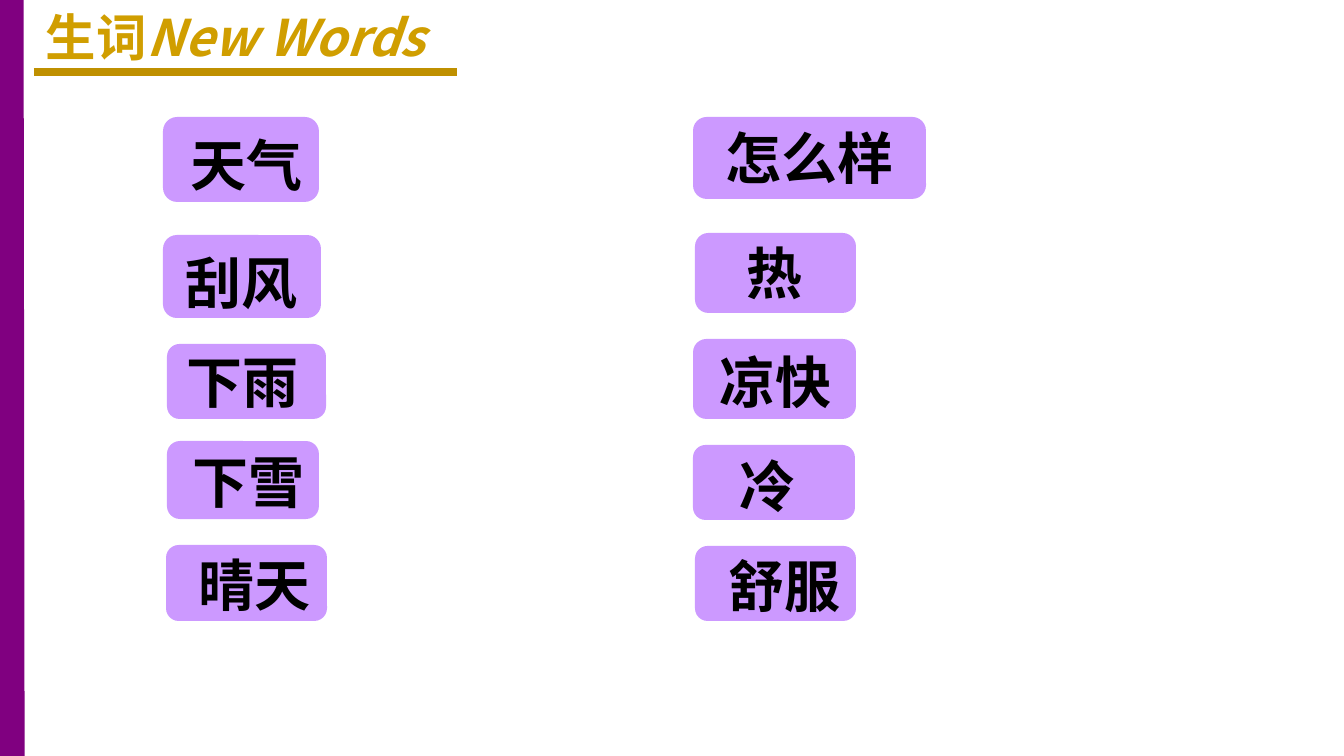
from lxml import etree
from pptx import Presentation
from pptx import util as u
from pptx.dml.color import RGBColor
from pptx.enum import shapes, text
from pptx.oxml.ns import qn

PX = 914400 / 100.8
CJK_FONT = "Noto Sans CJK SC"
TEXT_HEIGHT = 79

# word, card box (left, top, width, height), label offset in card (x, y), label width
WORD_CARDS = [
    ("天气", (163, 117, 156, 85), (15, 9), 137),
    ("刮风", (163, 235, 158, 83), (9, 9), 139),
    ("下雨", (167, 344, 159, 75), (9, -1), 133),
    ("下雪", (167, 441, 152, 78), (15, 2), 133),
    ("晴天", (166, 545, 161, 76), (22, 1), 133),
    ("怎么样", (693, 117, 233, 82), (11, 2), 211),
    ("热", (695, 233, 161, 80), (41, 1), 77),
    ("凉快", (693, 339, 163, 80), (16, 4), 133),
    ("冷", (693, 445, 162, 75), (36, 2), 77),
    ("舒服", (695, 546, 161, 75), (22, 1), 135),
]


def px(*lengths):
    return [u.Emu(round(length * PX)) for length in lengths]


def color(hex_string):
    return RGBColor.from_string(hex_string)


def add_line(parent, start, end, hex_color, points):
    line = parent.shapes.add_connector(
        shapes.MSO_CONNECTOR.STRAIGHT, *px(*start, *end))
    line.line.color.rgb = color(hex_color)
    line.line.width = u.Pt(points)
    etree.SubElement(line._element.spPr, qn("a:effectLst"))


def format_run(run, font_name, size, hex_color, italic=False):
    font = run.font
    font.name = font_name
    font.size = u.Pt(size)
    font.bold = True
    font.italic = italic
    font.color.rgb = color(hex_color)
    latin = run._r.rPr.find(qn("a:latin"))
    east_asian = etree.Element(qn("a:ea"), typeface=CJK_FONT)
    latin.addnext(east_asian)


def add_title(slide, left, top, width, height):
    group = slide.shapes.add_group_shape()
    box = group.shapes.add_textbox(*px(left, top, width, height))
    box.text_frame.word_wrap = False
    box.text_frame.margin_right = 0
    paragraph = box.text_frame.paragraphs[0]
    paragraph.alignment = text.PP_ALIGN.LEFT
    for words, italic in (("生词", False), ("New Words", True)):
        run = paragraph.add_run()
        run.text = words
        format_run(run, CJK_FONT, 36, "D09E00", italic)
    rule_top = top + height - 1
    add_line(group, (left - 2, rule_top), (left + width + 1, rule_top),
             "BF9000", 5.5)


def add_word_card(slide, word, box, offset, label_width):
    left, top, width, height = box
    group = slide.shapes.add_group_shape()
    card = group.shapes.add_shape(
        shapes.MSO_SHAPE.ROUNDED_RECTANGLE, *px(left, top, width, height))
    card.shadow.inherit = False
    card.fill.solid()
    card.fill.fore_color.rgb = color("CC99FF")
    card.line.fill.background()

    label = group.shapes.add_textbox(
        *px(left + offset[0], top + offset[1], label_width, TEXT_HEIGHT))
    label.text_frame.word_wrap = False
    label.text_frame.text = word
    paragraph = label.text_frame.paragraphs[0]
    paragraph.alignment = text.PP_ALIGN.CENTER
    format_run(paragraph.runs[0], "Calibri", 40, "000000")


def main():
    presentation = Presentation()
    presentation.slide_width, presentation.slide_height = px(1344, 756)
    slide = presentation.slides.add_slide(presentation.slide_layouts[6])
    add_line(slide, (12, 756), (11, -2), "800080", 18)
    add_title(slide, 36, 1, 420, 72)
    for word_card in WORD_CARDS:
        add_word_card(slide, *word_card)
    presentation.save("out.pptx")


if __name__ == "__main__":
    main()
